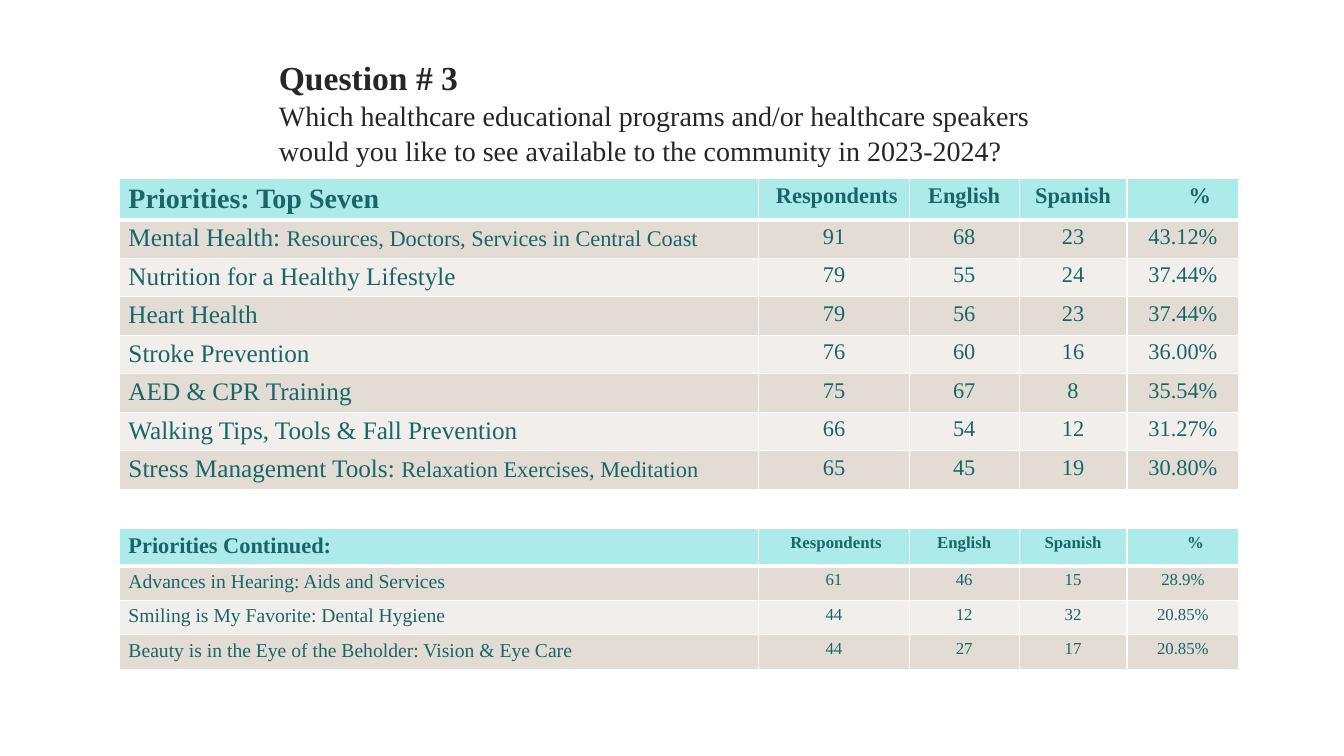
from dataclasses import dataclass

import pptx
import pptx.dml.color
import pptx.enum.text
import pptx.oxml
import pptx.oxml.ns
import pptx.util

Pt = pptx.util.Pt


@dataclass(frozen=True)
class Theme:
    """Colours, font and type sizes of the slide."""
    font: str = "Times New Roman"
    ink: str = "262626"
    teal: str = "196666"
    header_fill: str = "ADEBEB"
    odd_fill: str = "E2DCD4"
    even_fill: str = "F1EEEB"
    border: str = "FFFFFF"
    question_size: int = 24
    prompt_size: int = 20


@dataclass(frozen=True)
class TableSizes:
    """Type sizes and row heights of one priorities table."""
    header: int
    topic: int
    figure: int
    header_height: float
    row_height: float


THEME = Theme()
LEFT = 85
COLUMN_WIDTHS = (457, 107.5, 78.5, 77, 80)
COLUMN_HEADS = ("Respondents", "English", "Spanish", "%")
HEAD_INDENTS = (0.25, 0, 0, 1.5)
TOP_SIZES = TableSizes(20, 18, 16, 29.4, 27.5)
CONTINUED_SIZES = TableSizes(16, 14, 12, 27, 24.5)

TOP_SEVEN = (
    ("Mental Health: ", "Resources, Doctors, Services in Central Coast", "91", "68", "23", "43.12%"),
    ("Nutrition for a Healthy Lifestyle", "", "79", "55", "24", "37.44%"),
    ("Heart Health", "", "79", "56", "23", "37.44%"),
    ("Stroke Prevention", "", "76", "60", "16", "36.00%"),
    ("AED & CPR Training", "", "75", "67", "8", "35.54%"),
    ("Walking Tips, Tools & Fall Prevention", "", "66", "54", "12", "31.27%"),
    ("Stress Management Tools: ", "Relaxation Exercises, Meditation", "65", "45", "19", "30.80%"),
)
CONTINUED = (
    ("Advances in Hearing: Aids and Services", "", "61", "46", "15", "28.9%"),
    ("Smiling is My Favorite: Dental Hygiene", "", "44", "12", "32", "20.85%"),
    ("Beauty is in the Eye of the Beholder: Vision & Eye Care", "", "44", "27", "17", "20.85%"),
)


def rgb(colour):
    """Turn a hex string into a colour."""
    return pptx.dml.color.RGBColor.from_string(colour)


def add_run(paragraph, text, size, colour, bold=False):
    """Add one formatted run to a paragraph."""
    run = paragraph.add_run()
    run.text = text
    run.font.name = THEME.font
    run.font.size = Pt(size)
    run.font.bold = bold
    run.font.color.rgb = rgb(colour)


def add_question(slide):
    """Fill the title placeholder with the survey question."""
    title = slide.shapes.title
    title.left, title.top, title.width, title.height = Pt(192), Pt(35.5), Pt(576), Pt(103)
    frame = title.text_frame
    frame.word_wrap = True
    frame.auto_size = pptx.enum.text.MSO_AUTO_SIZE.NONE
    frame.vertical_anchor = pptx.enum.text.MSO_ANCHOR.TOP
    paragraph = frame.paragraphs[0]
    paragraph.alignment = pptx.enum.text.PP_ALIGN.LEFT
    paragraph.line_spacing = 1.05
    add_run(paragraph, "Question # 3", THEME.question_size, THEME.ink, bold=True)
    paragraph.add_line_break()
    add_run(
        paragraph,
        "Which healthcare educational programs and/or healthcare speakers "
        "would you like to see available to the community in 2023-2024?",
        THEME.prompt_size,
        THEME.ink,
    )


def set_borders(cell, bottom, top):
    """Draw the white rules around a cell."""
    properties = cell._tc.get_or_add_tcPr()
    widths = (("lnL", 1), ("lnR", 1), ("lnT", top), ("lnB", bottom))
    for position, (side, width) in enumerate(widths):
        rule = pptx.oxml.parse_xml(
            f'<a:{side} {pptx.oxml.ns.nsdecls("a")} w="{Pt(width)}"><a:solidFill>'
            f'<a:srgbClr val="{THEME.border}"/></a:solidFill></a:{side}>'
        )
        properties.insert(position, rule)


def fill_cell(cell, runs, row, centred, indent=0):
    """Write (text, size) runs into a cell and style it by its row."""
    is_header = row == 0
    cell.margin_left, cell.margin_right = Pt(6.8 + indent), Pt(6.8)
    cell.margin_top = cell.margin_bottom = Pt(3.4)
    band = THEME.odd_fill if row % 2 else THEME.even_fill
    cell.fill.solid()
    cell.fill.fore_color.rgb = rgb(THEME.header_fill if is_header else band)
    set_borders(cell, bottom=3 if is_header else 1, top=3 if row == 1 else 1)
    paragraph = cell.text_frame.paragraphs[0]
    align = pptx.enum.text.PP_ALIGN
    paragraph.alignment = align.CENTER if centred else align.LEFT
    for text, size in runs:
        if text:
            add_run(paragraph, text, size, THEME.teal, bold=is_header)


def add_priorities(slide, top, heading, priorities, sizes):
    """Add a table of priorities with its respondent counts."""
    height = sizes.header_height + sizes.row_height * len(priorities)
    table = slide.shapes.add_table(
        len(priorities) + 1, len(COLUMN_WIDTHS),
        Pt(LEFT), Pt(top), Pt(sum(COLUMN_WIDTHS)), Pt(height),
    ).table
    for column, width in zip(table.columns, COLUMN_WIDTHS):
        column.width = Pt(width)
    for row in table.rows:
        row.height = Pt(sizes.row_height)
    table.rows[0].height = Pt(sizes.header_height)

    fill_cell(table.cell(0, 0), [(heading, sizes.header)], 0, centred=False)
    for column, (head, indent) in enumerate(zip(COLUMN_HEADS, HEAD_INDENTS), 1):
        fill_cell(table.cell(0, column), [(head, sizes.figure)], 0, True, indent * sizes.figure)
    for row, (topic, detail, *figures) in enumerate(priorities, 1):
        topic_runs = [(topic, sizes.topic), (detail, sizes.figure)]
        fill_cell(table.cell(row, 0), topic_runs, row, centred=False)
        for column, figure in enumerate(figures, 1):
            fill_cell(table.cell(row, column), [(figure, sizes.figure)], row, centred=True)


def main():
    """Build the slide and save it."""
    deck = pptx.Presentation()
    deck.slide_width, deck.slide_height = Pt(960), Pt(540)
    slide = deck.slides.add_slide(deck.slide_layouts[5])
    add_question(slide)
    add_priorities(slide, 127.5, "Priorities: Top Seven", TOP_SEVEN, TOP_SIZES)
    add_priorities(slide, 377.5, "Priorities Continued:", CONTINUED, CONTINUED_SIZES)
    deck.save("out.pptx")


if __name__ == "__main__":
    main()
